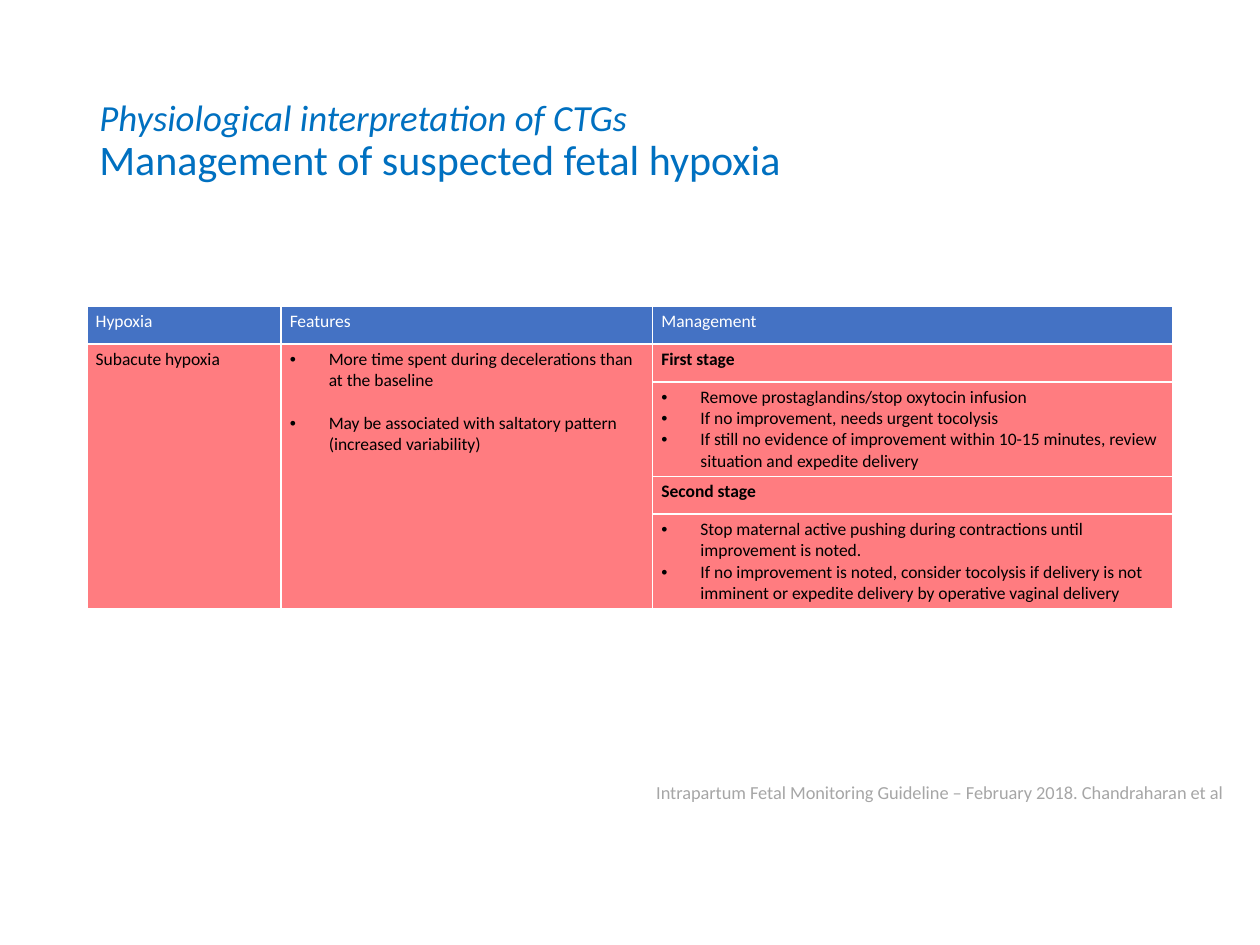
from lxml import etree
from pptx import Presentation
from pptx.dml.color import RGBColor
from pptx.enum.text import MSO_ANCHOR, MSO_AUTO_SIZE
from pptx.oxml.ns import qn
from pptx.util import Inches, Pt

MIDDLE = MSO_ANCHOR.MIDDLE
FIT_SHAPE = MSO_AUTO_SIZE.SHAPE_TO_FIT_TEXT

TITLE = [
    ("Physiological interpretation of CTGs", "title_lead"),
    ("Management of suspected fetal hypoxia", "title_main"),
]
HEADERS = ["Hypoxia", "Features", "Management"]
CONDITION = "Subacute hypoxia"
FEATURES = [
    "More time spent during decelerations than at the baseline",
    "May be associated with saltatory pattern (increased variability)",
]
STAGES = [
    ("First stage", [
        "Remove prostaglandins/stop oxytocin infusion",
        "If no improvement, needs urgent tocolysis",
        "If still no evidence of improvement within 10-15 minutes, review situation and expedite delivery",
    ]),
    ("Second stage", [
        "Stop maternal active pushing during contractions until improvement is noted.",
        "If no improvement is noted, consider tocolysis if delivery is not imminent or expedite delivery by operative vaginal delivery",
    ]),
]
SOURCE = "Intrapartum Fetal Monitoring Guideline – February 2018. Chandraharan et al"

LEFT, WIDTH = 0.69, 8.62
COLUMN_WIDTHS = [1.54, 2.95, 4.13]
HEADING_HEIGHT, LIST_HEIGHT = 0.3, 0.75
ROW_HEIGHTS = [HEADING_HEIGHT] + [HEADING_HEIGHT, LIST_HEIGHT] * len(STAGES)
BULLET_INDENT = Inches(0.31)
CELL_MARGINS = {
    "margin_left": Inches(0.07), "margin_right": Inches(0.07),
    "margin_top": Inches(0.04), "margin_bottom": Inches(0.04),
}
THEME = {
    "font": "Calibri",
    "header_fill": "4472C4",
    "body_fill": "FF7C80",
    "border": "FFFFFF",
    "border_width": Pt(1),
    "title_lead": {"size": Pt(21), "color": "0070C0", "italic": True},
    "title_main": {"size": Pt(24), "color": "0070C0", "italic": False},
    "header": {"size": Pt(10), "color": "FFFFFF", "bold": False},
    "body": {"size": Pt(10), "color": "000000", "bold": False},
    "stage": {"size": Pt(10), "color": "000000", "bold": True},
    "source": {"size": Pt(10.5), "color": "A6A6A6"},
}


def add_run(paragraph, text, style):
    run = paragraph.add_run()
    run.text = text
    run.font.name = THEME["font"]
    for name, value in THEME[style].items():
        if name == "color":
            run.font.color.rgb = RGBColor.from_string(value)
        else:
            setattr(run.font, name, value)


def add_bullet(paragraph):
    properties = paragraph._p.get_or_add_pPr()
    properties.set("marL", str(BULLET_INDENT))
    properties.set("indent", str(-BULLET_INDENT))
    etree.SubElement(properties, qn("a:buFont"), typeface="Arial")
    etree.SubElement(properties, qn("a:buChar"), char="•")


def format_cell(cell, fill):
    for name, value in CELL_MARGINS.items():
        setattr(cell, name, value)
    properties = cell._tc.get_or_add_tcPr()
    for side in ("lnL", "lnR", "lnT", "lnB"):
        line = etree.SubElement(properties, qn(f"a:{side}"), w=str(THEME["border_width"]))
        solid = etree.SubElement(line, qn("a:solidFill"))
        etree.SubElement(solid, qn("a:srgbClr"), val=THEME["border"])
    cell.fill.solid()
    cell.fill.fore_color.rgb = RGBColor.from_string(fill)


def write_list(cell, items, spacing=Pt(0)):
    for index, item in enumerate(items):
        frame = cell.text_frame
        paragraph = frame.add_paragraph() if index else frame.paragraphs[0]
        paragraph.space_before = paragraph.space_after = spacing
        add_bullet(paragraph)
        add_run(paragraph, item, "body")


def write_line(cell, text, style):
    add_run(cell.text_frame.paragraphs[0], text, style)


def add_title(slide):
    shape = slide.shapes.add_textbox(Inches(LEFT), Inches(0.4), Inches(WIDTH), Inches(1.45))
    frame = shape.text_frame
    frame.word_wrap = True
    frame.vertical_anchor = MIDDLE
    paragraph = frame.paragraphs[0]
    paragraph.line_spacing = 0.9
    for index, (text, style) in enumerate(TITLE):
        if index:
            paragraph.add_line_break()
        add_run(paragraph, text, style)


def add_management_table(slide):
    table = slide.shapes.add_table(
        len(ROW_HEIGHTS), len(COLUMN_WIDTHS), Inches(LEFT), Inches(2.43),
        Inches(WIDTH), Inches(sum(ROW_HEIGHTS))).table
    for column, width in zip(table.columns, COLUMN_WIDTHS):
        column.width = Inches(width)
    for index, (row, height) in enumerate(zip(table.rows, ROW_HEIGHTS)):
        row.height = Inches(height)
        for cell in row.cells:
            format_cell(cell, THEME["body_fill" if index else "header_fill"])
    for column in (0, 1):
        table.cell(1, column).merge(table.cell(len(ROW_HEIGHTS) - 1, column))

    for column, header in enumerate(HEADERS):
        write_line(table.cell(0, column), header, "header")
    write_line(table.cell(1, 0), CONDITION, "body")
    write_list(table.cell(1, 1), FEATURES, Pt(6))
    for index, (stage, steps) in enumerate(STAGES):
        row = 1 + 2 * index
        write_line(table.cell(row, 2), stage, "stage")
        write_list(table.cell(row + 1, 2), steps)


def add_source(slide):
    shape = slide.shapes.add_textbox(Inches(5.11), Inches(6.15), Inches(4.78), Inches(0.28))
    frame = shape.text_frame
    frame.word_wrap = False
    frame.auto_size = FIT_SHAPE
    add_run(frame.paragraphs[0], SOURCE, "source")


def main():
    """Build the slide on managing suspected fetal hypoxia."""
    presentation = Presentation()
    presentation.slide_width, presentation.slide_height = Inches(10), Inches(7.5)
    slide = presentation.slides.add_slide(presentation.slide_layouts[6])
    add_title(slide)
    add_management_table(slide)
    add_source(slide)
    presentation.save("out.pptx")


if __name__ == "__main__":
    main()
